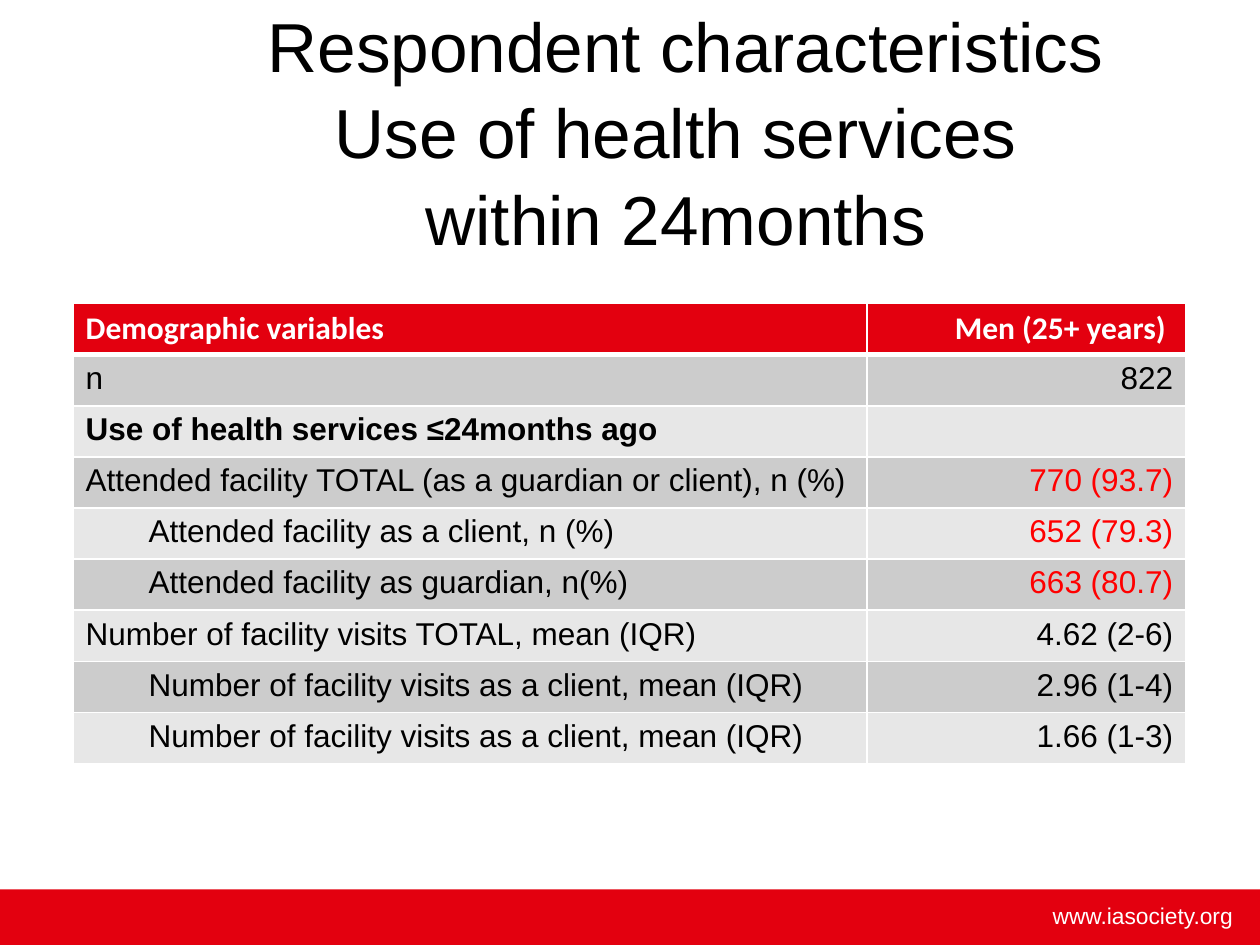
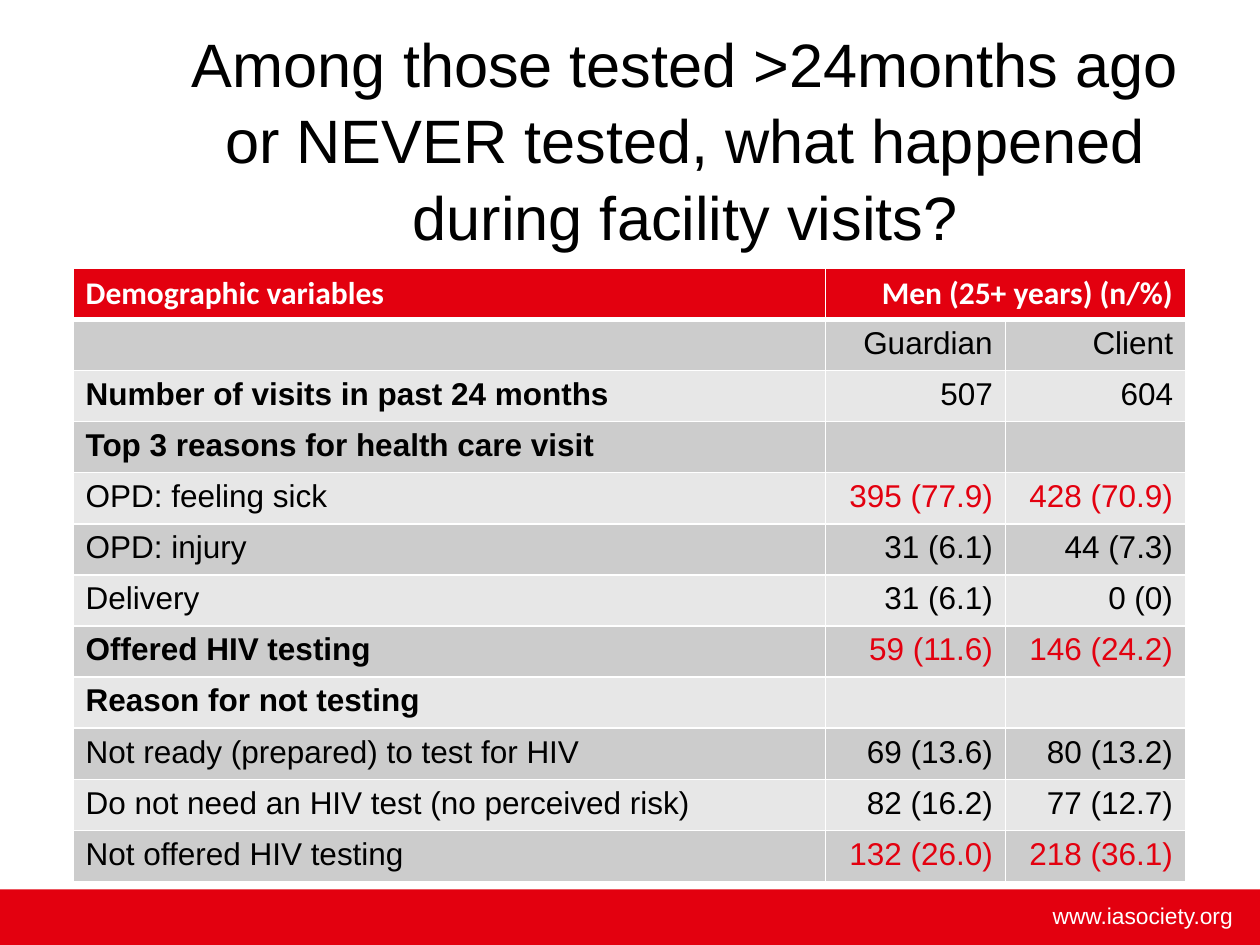
from lxml import etree
from pptx import Presentation
from pptx.dml.color import RGBColor
from pptx.enum.shapes import MSO_SHAPE
from pptx.enum.text import MSO_ANCHOR, MSO_AUTO_SIZE, PP_ALIGN
from pptx.oxml.ns import qn
from pptx.util import Inches, Pt

RECT = MSO_SHAPE.RECTANGLE
MIDDLE = MSO_ANCHOR.MIDDLE
FIXED, GROW = MSO_AUTO_SIZE.NONE, MSO_AUTO_SIZE.SHAPE_TO_FIT_TEXT
LEFT, CENTER, RIGHT = PP_ALIGN.LEFT, PP_ALIGN.CENTER, PP_ALIGN.RIGHT

BLACK = RGBColor(0x00, 0x00, 0x00)
WHITE = RGBColor(0xFF, 0xFF, 0xFF)
BRAND = RGBColor(0xE3, 0x00, 0x0F)
BRIGHT = RGBColor(0xFF, 0x00, 0x00)
BANDS = RGBColor(0xCC, 0xCC, 0xCC), RGBColor(0xE7, 0xE7, 0xE7)

SITE = "www.iasociety.org"

# Row marks: b = bold label, i = indented label, r = red values
SLIDES = [
    {
        "title": ["Respondent characteristics", "Use of health services ", "within 24months "],
        "size": 39.6,
        "title_top": 0.4,
        "top": 2.41,
        "height": 3.65,
        "cols": [6.3, 2.53],
        "accent": BRIGHT,
        "head": ["Demographic variables", "Men (25+ years) "],
        "rows": [
            ("", "n", "822"),
            ("b", "Use of health services ≤24months ago", ""),
            ("r", "Attended facility TOTAL (as a guardian or client), n (%)", "770 (93.7)"),
            ("ir", "Attended facility as a client, n (%)", "652 (79.3)"),
            ("ir", "Attended facility as guardian, n(%)", "663 (80.7)"),
            ("", "Number of facility visits TOTAL, mean (IQR)", "4.62 (2-6)"),
            ("i", "Number of facility visits as a client, mean (IQR)", "2.96 (1-4)"),
            ("i", "Number of facility visits as a client, mean (IQR)", "1.66 (1-3)"),
        ],
    },
    {
        "title": ["Among those tested >24months ago or NEVER tested, "
                  "what happened during facility visits?"],
        "size": 35,
        "title_top": 0.47,
        "top": 2.13,
        "height": 4.87,
        "cols": [5.97, 1.43, 1.43],
        "accent": BRAND,
        "head": ["Demographic variables", "Men (25+ years) (n/%)"],
        "rows": [
            ("", "", "Guardian", "Client"),
            ("b", "Number of visits in past 24 months", "507", "604"),
            ("b", "Top 3 reasons for health care visit", "", ""),
            ("r", "OPD: feeling sick", "395 (77.9)", "428 (70.9)"),
            ("", "OPD: injury", "31 (6.1)", "44 (7.3)"),
            ("", "Delivery", "31 (6.1)", "0 (0)"),
            ("br", "Offered HIV testing", "59 (11.6)", "146 (24.2)"),
            ("b", "Reason for not testing", "", ""),
            ("", "Not ready (prepared) to test for HIV", "69 (13.6)", "80 (13.2)"),
            ("", "Do not need an HIV test (no perceived risk)", "82 (16.2)", "77 (12.7)"),
            ("r", "Not offered HIV testing", "132 (26.0)", "218 (36.1)"),
        ],
    },
]


def write(para, text, size, color=BLACK, face="Arial", bold=False, align=LEFT):
    para.alignment = align
    run = para.add_run()
    run.text = text
    look = {"size": Pt(size), "name": face, "bold": bold}
    for key, value in look.items():
        setattr(run.font, key, value)
    run.font.color.rgb = color


def add_title(slide, data):
    title = slide.shapes.title
    place = {"left": 1.38, "top": data["title_top"], "width": 8.12, "height": 1.25}
    for key, value in place.items():
        setattr(title, key, Inches(value))
    frame = title.text_frame
    frame.auto_size, frame.word_wrap = FIXED, True
    frame.vertical_anchor = MIDDLE
    para = frame.paragraphs[0]
    para.line_spacing = 1.04
    for i, line in enumerate(data["title"]):
        if i:
            para.add_line_break()
        write(para, line, data["size"], align=CENTER)


def add_footer(slide):
    band = slide.shapes.add_shape(RECT, 0, Inches(7.06), Inches(10), Inches(0.44))
    band.shadow.inherit = False
    band.fill.solid()
    band.fill.fore_color.rgb = BRAND
    band.line.fill.background()
    box = slide.shapes.add_textbox(Inches(6.57), Inches(7.11), Inches(3.31), Inches(0.32))
    frame = box.text_frame
    frame.word_wrap, frame.auto_size = True, GROW
    write(frame.paragraphs[0], SITE, 13, WHITE, align=RIGHT)


def paint(cell, fill, base=1):
    """Give a cell white borders, the lower one base points wide, and a fill."""
    props = cell._tc.get_or_add_tcPr()
    for side, width in {"L": 1, "R": 1, "T": 1, "B": base}.items():
        line = etree.SubElement(props, qn(f"a:ln{side}"), w=str(Pt(width)))
        solid = etree.SubElement(line, qn("a:solidFill"))
        etree.SubElement(solid, qn("a:srgbClr"), val=str(WHITE))
    cell.fill.solid()
    cell.fill.fore_color.rgb = fill


def add_grid(slide, data):
    cols, rows = data["cols"], data["rows"]
    count = len(rows) + 1
    table = slide.shapes.add_table(
        count, len(cols), Inches(0.58), Inches(data["top"]),
        Inches(sum(cols)), Inches(data["height"])).table
    table.horz_banding = False
    for col, width in zip(table.columns, cols):
        col.width = Inches(width)
    for row in table.rows:
        row.height = Inches(data["height"] / count)

    for cell in table.rows[0].cells:
        paint(cell, BRAND, 3)
    if len(cols) > 2:
        table.cell(0, 1).merge(table.cell(0, len(cols) - 1))
    for c, text in enumerate(data["head"]):
        write(table.cell(0, c).text_frame.paragraphs[0], text, 18, WHITE,
              "Calibri", True, RIGHT if c else LEFT)

    for r, (marks, *texts) in enumerate(rows, 1):
        for c, text in enumerate(texts):
            cell = table.cell(r, c)
            paint(cell, BANDS[(r - 1) % 2])
            if not text:
                continue
            para = cell.text_frame.paragraphs[0]
            if c:
                color = data["accent"] if "r" in marks else BLACK
                write(para, text, 18, color, align=RIGHT)
            else:
                write(para, text, 18, bold="b" in marks)
                if "i" in marks:
                    para.level = 1
                    para._p.get_or_add_pPr().set("marL", str(Inches(0.5)))


def main():
    deck = Presentation()
    deck.slide_width, deck.slide_height = Inches(10), Inches(7.5)
    for data in SLIDES:
        slide = deck.slides.add_slide(deck.slide_layouts[5])
        add_footer(slide)
        add_title(slide, data)
        add_grid(slide, data)
    deck.save("out.pptx")


if __name__ == "__main__":
    main()
